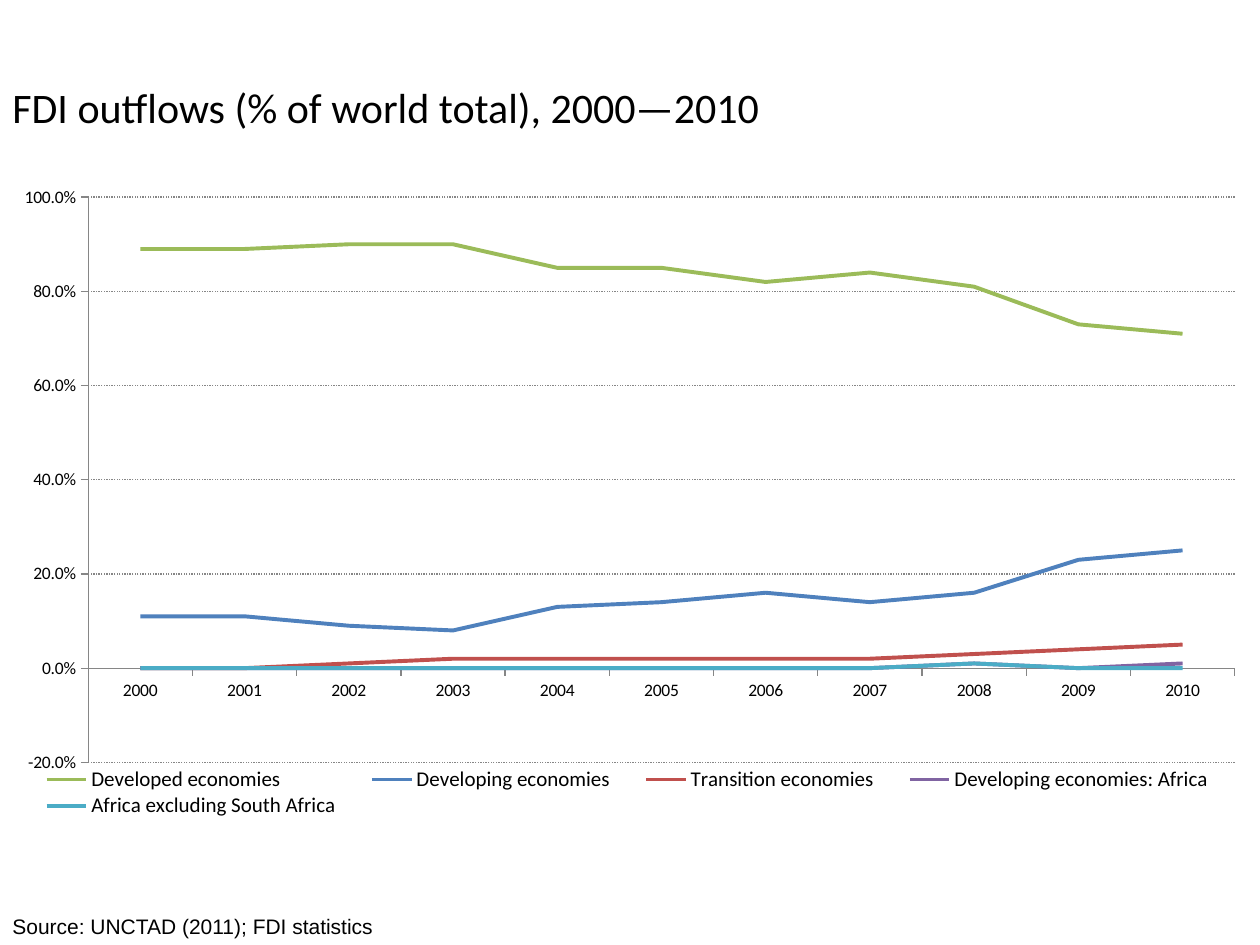
import pptx
import pptx.chart.data
import pptx.dml.color
import pptx.enum.chart
import pptx.enum.dml
import pptx.oxml
import pptx.oxml.ns
import pptx.util

PX = 914400 // 126
COLORS = {
    "text": "000000",
    "axis": "868686",
    "developed": "9BBB59",
    "developing": "4F81BD",
    "transition": "C0504D",
    "africa": "8064A2",
    "africa_ex_sa": "4BACC6",
}
CHART_BOX = (0, 175, 1260, 655)
PLOT_BOX = (88, 22, 1146, 565)
LEGEND_BOX = (18, 591, 1220, 54)

YEARS = [str(year) for year in range(2000, 2011)]
OUTFLOWS = [  # name, colour, share of world total
    ("Developed economies", "developed",
     [0.89, 0.89, 0.9, 0.9, 0.85, 0.85, 0.82, 0.84, 0.81, 0.73, 0.71]),
    ("Developing economies", "developing",
     [0.11, 0.11, 0.09, 0.08, 0.13, 0.14, 0.16, 0.14, 0.16, 0.23, 0.25]),
    ("Transition economies", "transition",
     [0, 0, 0.01, 0.02, 0.02, 0.02, 0.02, 0.02, 0.03, 0.04, 0.05]),
    ("Developing economies: Africa", "africa",
     [0, 0, 0, 0, 0, 0, 0, 0, 0.01, 0, 0.01]),
    ("Africa excluding South Africa", "africa_ex_sa",
     [0, 0, 0, 0, 0, 0, 0, 0, 0.01, 0, 0]),
]


def rgb(name):
    return pptx.dml.color.RGBColor.from_string(COLORS[name])


def set_layout(element, box, inner=False):
    """Place a chart part at a px box measured from the chart's corner."""
    for old in element.findall(pptx.oxml.ns.qn("c:layout")):
        element.remove(old)
    x, y, w, h = box
    chart_w, chart_h = CHART_BOX[2:]
    target = '<c:layoutTarget val="inner"/>' if inner else ""
    layout = pptx.oxml.parse_xml(
        f'<c:layout {pptx.oxml.ns.nsdecls("c")}><c:manualLayout>{target}'
        '<c:xMode val="edge"/><c:yMode val="edge"/>'
        f'<c:x val="{x / chart_w:.3f}"/><c:y val="{y / chart_h:.3f}"/>'
        f'<c:w val="{w / chart_w:.3f}"/><c:h val="{h / chart_h:.3f}"/>'
        '</c:manualLayout></c:layout>')
    position = element.find(pptx.oxml.ns.qn("c:legendPos"))
    if position is None:
        element.insert(0, layout)
    else:
        position.addnext(layout)


deck = pptx.Presentation()
deck.slide_width, deck.slide_height = 1260 * PX, 945 * PX
slide = deck.slides.add_slide(deck.slide_layouts[6])

captions = [
    ("FDI outflows (% of world total), 2000—2010", (0, 75, 1191, 69), 24, "Calibri"),
    ("Source: UNCTAD (2011); FDI statistics", (0, 907, 446, 38), 12, "Arial"),
]
for wording, box, size, face in captions:
    caption = slide.shapes.add_textbox(*(side * PX for side in box)).text_frame
    caption.word_wrap = True
    paragraph = caption.paragraphs[0]
    paragraph.text = wording
    paragraph.font.size = pptx.util.Pt(size)
    paragraph.font.name = face
    paragraph.font.color.rgb = rgb("text")

shares = pptx.chart.data.CategoryChartData(number_format="0.0%")
shares.categories = YEARS
for name, _, values in OUTFLOWS:
    shares.add_series(name, values)
chart = slide.shapes.add_chart(
    pptx.enum.chart.XL_CHART_TYPE.LINE, *(side * PX for side in CHART_BOX), shares).chart
chart.has_title = False
chart.font.size = pptx.util.Pt(10)
chart.font.name = "Calibri"
chart.font.color.rgb = rgb("text")

plot = chart.plots[0]
plot.vary_by_categories = False
for series, (_, color, _) in zip(plot.series, OUTFLOWS):
    series.smooth = False
    series.marker.style = pptx.enum.chart.XL_MARKER_STYLE.NONE
    series.format.line.color.rgb = rgb(color)
    series.format.line.width = pptx.util.Pt(2.25)

share_axis = chart.value_axis
share_axis.minimum_scale, share_axis.maximum_scale = -0.2, 1
share_axis.major_unit = 0.2
share_axis.tick_labels.number_format = "0.0%"
share_axis.tick_labels.number_format_is_linked = False
share_axis.has_major_gridlines = True
gridline = share_axis.major_gridlines.format.line
gridline.color.rgb = rgb("axis")
gridline.width = pptx.util.Pt(0.75)
gridline.dash_style = pptx.enum.dml.MSO_LINE.ROUND_DOT
for axis in (chart.category_axis, share_axis):
    axis.major_tick_mark = pptx.enum.chart.XL_TICK_MARK.OUTSIDE
    axis.format.line.color.rgb = rgb("axis")
    axis.format.line.width = pptx.util.Pt(0.75)

chart.has_legend = True
legend = chart.legend
legend.position = pptx.enum.chart.XL_LEGEND_POSITION.BOTTOM
legend.include_in_layout = False
legend.font.size = pptx.util.Pt(12)
legend.font.name = "Calibri"
legend.font.color.rgb = rgb("text")

plot_area = chart.element.find(".//" + pptx.oxml.ns.qn("c:plotArea"))
set_layout(plot_area, PLOT_BOX, inner=True)
set_layout(chart.element.find(".//" + pptx.oxml.ns.qn("c:legend")), LEGEND_BOX)

deck.save("out.pptx")
